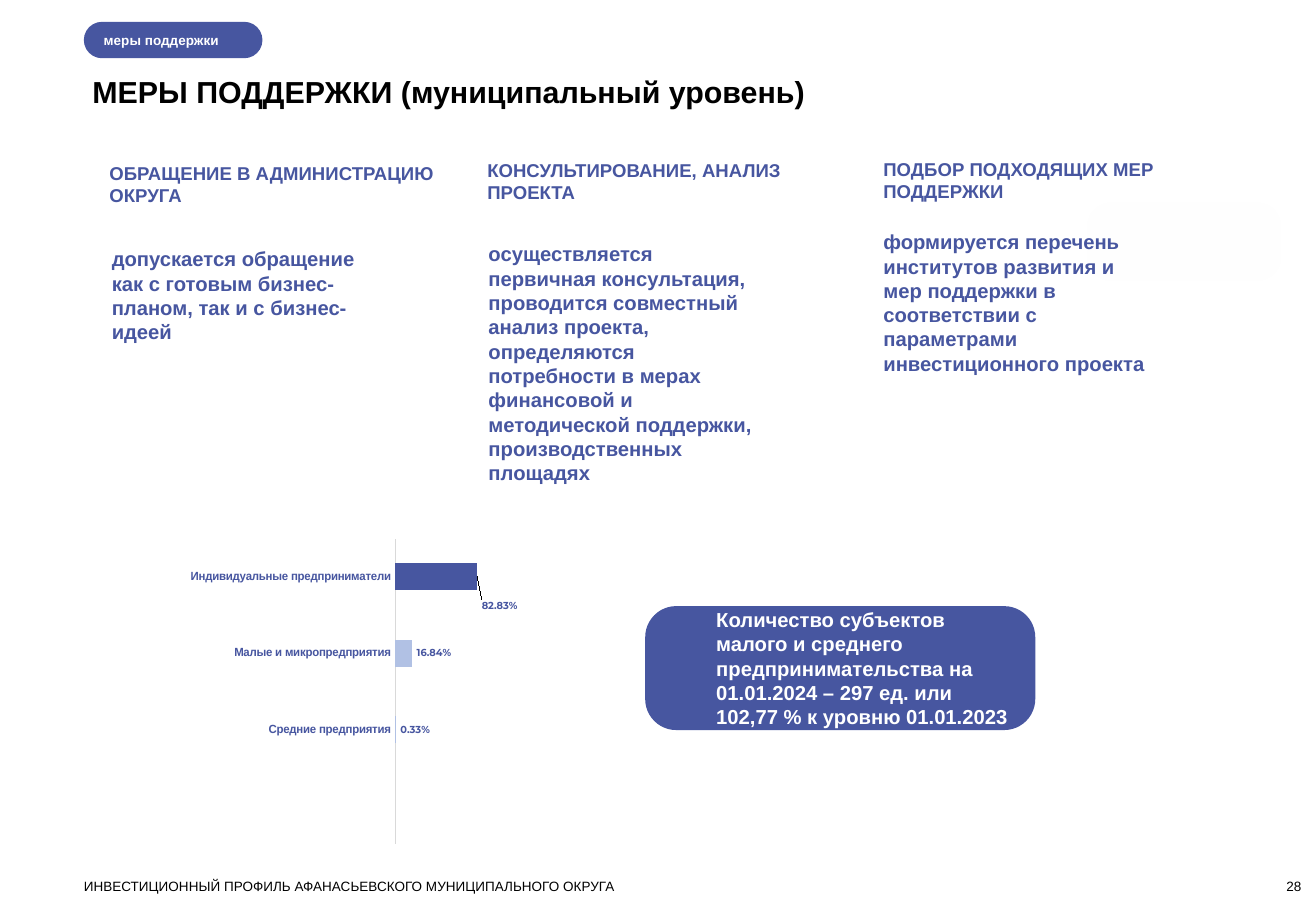
from lxml import etree
from pptx import Presentation
from pptx.chart.data import CategoryChartData
from pptx.dml.color import RGBColor
from pptx.enum.chart import XL_CHART_TYPE, XL_LABEL_POSITION, XL_TICK_MARK
from pptx.enum.shapes import MSO_SHAPE
from pptx.enum.text import MSO_ANCHOR, PP_ALIGN
from pptx.oxml.ns import qn
from pptx.util import Pt

PX = 9144
BLUE = RGBColor(0x47, 0x56, 0xA0)
PALE = RGBColor(0xB1, 0xC1, 0xE4)
GREY = RGBColor(0xD9, 0xD9, 0xD9)
MIST = RGBColor(0xFE, 0xFE, 0xFE)
WHITE = RGBColor(0xFF, 0xFF, 0xFF)
BLACK = RGBColor(0, 0, 0)
ROUND = MSO_SHAPE.ROUNDED_RECTANGLE
BARS = XL_CHART_TYPE.BAR_CLUSTERED
OUTER = XL_LABEL_POSITION.OUTSIDE_END
NO_TICK = XL_TICK_MARK.NONE
TOP, MIDDLE, BOTTOM = MSO_ANCHOR.TOP, MSO_ANCHOR.MIDDLE, MSO_ANCHOR.BOTTOM
LEFT, RIGHT = PP_ALIGN.LEFT, PP_ALIGN.RIGHT
PERCENT = "0.00%"

STEPS = [
    ((90, 133, 278, 151), 2, 70, "ОБРАЩЕНИЕ В АДМИНИСТРАЦИЮ ОКРУГА",
     "допускается обращение как с готовым бизнес-планом, так и с бизнес-идеей"),
    ((401, 131, 278, 270), 1, 68, "КОНСУЛЬТИРОВАНИЕ, АНАЛИЗ ПРОЕКТА",
     "осуществляется первичная консультация, проводится совместный анализ "
     "проекта, определяются потребности в мерах финансовой и методической "
     "поддержки, производственных площадях"),
    ((727, 130, 306, 180), 0, 59, "ПОДБОР ПОДХОДЯЩИХ МЕР ПОДДЕРЖКИ",
     "формируется перечень институтов развития и мер поддержки в соответствии "
     "с параметрами инвестиционного проекта"),
]
FIRMS = [("", None), ("Средние предприятия", 0.0033),
         ("Малые и микропредприятия", 0.1684),
         ("Индивидуальные предприниматели", 0.8283)]


def scale(box):
    """Turn a box in px into EMU."""
    return [n * PX for n in box]


def style(font, size, color, bold=True, name="Arial"):
    """Set the look of a font."""
    font.size, font.bold, font.name = Pt(size), bold, name
    font.color.rgb = color


def write(shape, text, size, color, bold=True, inset=(0, 0, 0, 0),
          anchor=TOP, align=LEFT):
    """Put one paragraph into a shape."""
    frame = shape.text_frame
    frame.word_wrap = True
    frame.vertical_anchor = anchor
    (frame.margin_left, frame.margin_top,
     frame.margin_right, frame.margin_bottom) = scale(inset)
    para = frame.paragraphs[0]
    para.text, para.alignment = text, align
    style(para.font, size, color, bold)


def label(slide, box, text, size, color, **look):
    """Add a text box."""
    write(slide.shapes.add_textbox(*scale(box)), text, size, color, **look)


def pill(slide, box, curve, color):
    """Add a plain rounded box."""
    shape = slide.shapes.add_shape(ROUND, *scale(box))
    shape.adjustments[0] = curve
    shape.shadow.inherit = False
    shape.fill.solid()
    shape.fill.fore_color.rgb = color
    shape.line.fill.background()
    return shape


def header(slide, box):
    """Draw the section tag and the title."""
    x, y, w, h = box
    tag = pill(slide, (x, y, 147, 30), 0.5, BLUE)
    write(tag, "меры поддержки", 8, WHITE, inset=(12, 0, 0, 0), anchor=MIDDLE)
    label(slide, (x + 7, y + 42, w - 7, h - 42),
          "МЕРЫ ПОДДЕРЖКИ (муниципальный уровень)", 18, BLACK)


def step(slide, box, shift, drop, head, body):
    """Draw one column with a heading and its text."""
    x, y, w, h = box
    label(slide, (x, y, w, 37), head, 11, BLUE)
    label(slide, (x + shift, y + drop, 220, h - drop), body, 12, BLUE)


def place(parent, index, **rules):
    """Insert a manual layout into a chart element."""
    for old in parent.findall(qn("c:layout")):
        parent.remove(old)
    layout = etree.Element(qn("c:layout"))
    manual = etree.SubElement(layout, qn("c:manualLayout"))
    for key, val in rules.items():
        etree.SubElement(manual, qn("c:" + key)).set("val", str(val))
    parent.insert(index, layout)


def shares(slide, box):
    """Draw the bar chart of business types."""
    data = CategoryChartData(number_format=PERCENT)
    data.categories = [name for name, _ in FIRMS]
    data.add_series("Series 1", [val for _, val in FIRMS])
    chart = slide.shapes.add_chart(BARS, *scale(box), data).chart
    chart.has_title = chart.has_legend = False
    chart.font.size, chart.font.name = Pt(10), "Calibri"
    chart.font.color.rgb = BLACK

    names, rates = chart.category_axis, chart.value_axis
    names.major_tick_mark = names.minor_tick_mark = NO_TICK
    names.has_major_gridlines = rates.has_major_gridlines = False
    names.format.line.color.rgb = GREY
    names.format.line.width = Pt(0.75)
    style(names.tick_labels.font, 7, BLUE)
    rates.visible = False
    rates.minimum_scale, rates.maximum_scale = 0, 0.94

    plot = chart.plots[0]
    plot.gap_width, plot.vary_by_categories = 182, False
    bars = plot.series[0]
    bars.format.fill.solid()
    bars.format.fill.fore_color.rgb = PALE
    tags = bars.data_labels
    tags.show_value, tags.position = True, OUTER
    tags.number_format, tags.number_format_is_linked = PERCENT, False
    style(tags.font, 6, BLUE, name="Montserrat")

    last = bars.points[len(FIRMS) - 1]
    last.format.fill.solid()
    last.format.fill.fore_color.rgb = BLUE
    last.data_label.position = OUTER
    style(last.data_label.font, 6, BLUE, name="Montserrat")
    root = chart._chartSpace
    place(next(root.iter(qn("c:dLbl"))), 1, x=0, y=0.08)
    place(next(root.iter(qn("c:plotArea"))), 0, layoutTarget="inner",
          xMode="edge", yMode="edge", x=0.69, y=0.14, w=0.26, h=0.83)


def total(slide, box):
    """Draw the callout with the total count."""
    write(pill(slide, box, 0.25, BLUE),
          "Количество субъектов малого и среднего предпринимательства на "
          "01.01.2024 – 297 ед. или 102,77 % к уровню 01.01.2023",
          12, WHITE, inset=(51, 5, 12, 5), anchor=MIDDLE)


def footer(slide, box):
    """Draw the document name and the page number."""
    x, y, w, h = box
    label(slide, (x, y, 800, h),
          "ИНВЕСТИЦИОННЫЙ ПРОФИЛЬ АФАНАСЬЕВСКОГО МУНИЦИПАЛЬНОГО ОКРУГА",
          8, BLACK, bold=False)
    label(slide, (x + w - 80, y, 80, h), "28", 8, BLACK, bold=False,
          anchor=BOTTOM, align=RIGHT)


def main():
    """Build and save the slide."""
    deck = Presentation()
    deck.slide_width, deck.slide_height = scale((1083, 750))
    slide = deck.slides.add_slide(deck.slide_layouts[6])
    header(slide, (69, 18, 1002, 72))
    pill(slide, (895, 167, 159, 64), 0.3, MIST)
    for item in STEPS:
        step(slide, *item)
    shares(slide, (123, 401, 303, 303))
    total(slide, (531, 499, 321, 102))
    footer(slide, (69, 723, 1002, 13))
    deck.save("out.pptx")


if __name__ == "__main__":
    main()
